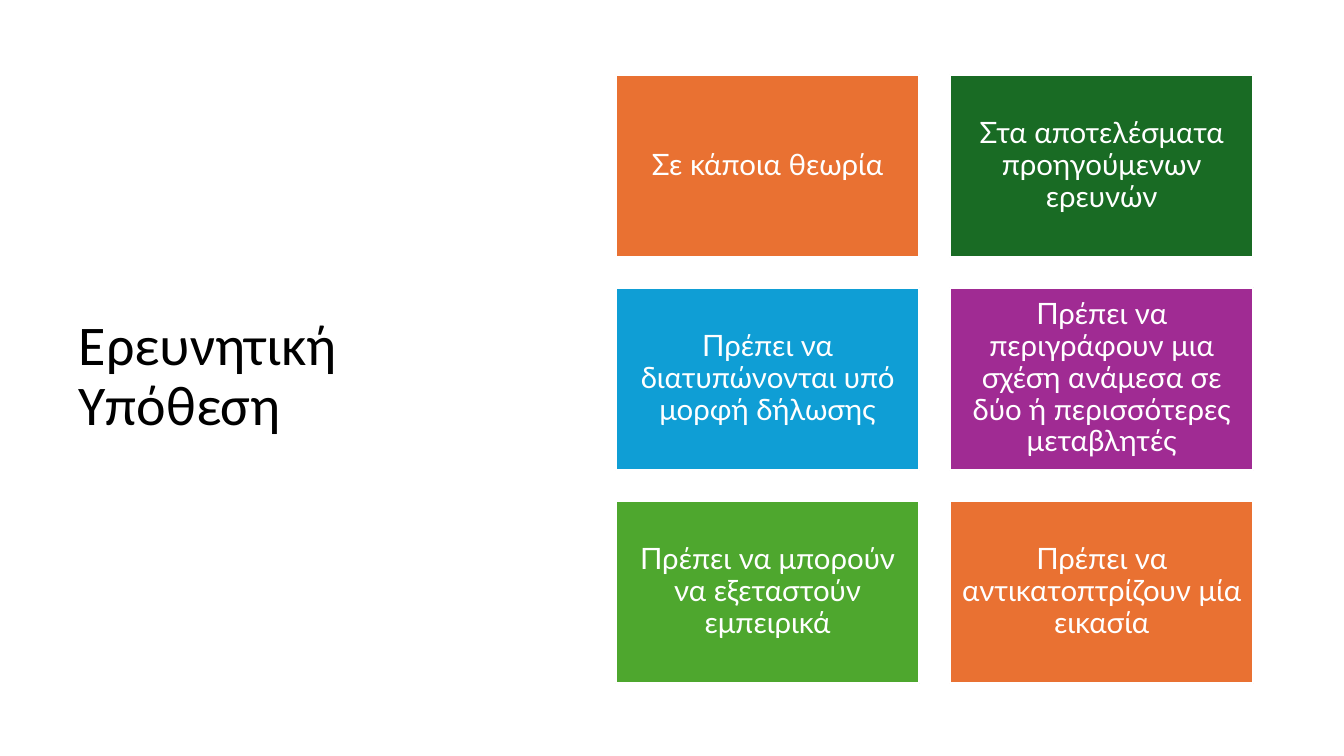
from dataclasses import dataclass

from pptx import Presentation
from pptx.dml.color import RGBColor
from pptx.enum.shapes import MSO_SHAPE
from pptx.enum.text import MSO_ANCHOR, MSO_AUTO_SIZE, PP_ALIGN
from pptx.slide import Slide
from pptx.text.text import TextFrame
from pptx.util import Cm, Pt

RECTANGLE = MSO_SHAPE.RECTANGLE
MIDDLE = MSO_ANCHOR.MIDDLE
NO_AUTOFIT = MSO_AUTO_SIZE.NONE
LEFT = PP_ALIGN.LEFT
CENTER = PP_ALIGN.CENTER

BLACK = RGBColor(0x00, 0x00, 0x00)
WHITE = RGBColor(0xFF, 0xFF, 0xFF)
ORANGE = RGBColor(0xE9, 0x71, 0x32)
DARK_GREEN = RGBColor(0x19, 0x6B, 0x24)
BLUE = RGBColor(0x0F, 0x9E, 0xD5)
PURPLE = RGBColor(0xA0, 0x2B, 0x93)
GREEN = RGBColor(0x4E, 0xA7, 0x2E)

TITLE_ONLY_LAYOUT = 5
COLUMNS = 2
GRID_LEFT, GRID_TOP = 15.52, 1.88
CARD_WIDTH, CARD_HEIGHT = 7.65, 4.6
CARD_GAP = 0.77
CARD_INSET = Cm(0.23)


@dataclass(frozen=True)
class Card:
    text: str
    color: RGBColor


@dataclass(frozen=True)
class TextStyle:
    font: str
    size: int
    color: RGBColor
    alignment: PP_ALIGN


TITLE_STYLE = TextStyle("Calibri", 40, BLACK, LEFT)
CARD_STYLE = TextStyle("Lato", 21, WHITE, CENTER)

CARDS = [
    Card("Σε κάποια θεωρία", ORANGE),
    Card("Στα αποτελέσματα προηγούμενων ερευνών", DARK_GREEN),
    Card("Πρέπει να διατυπώνονται υπό μορφή δήλωσης", BLUE),
    Card("Πρέπει να περιγράφουν μια σχέση ανάμεσα σε δύο ή περισσότερες μεταβλητές", PURPLE),
    Card("Πρέπει να μπορούν να εξεταστούν εμπειρικά", GREEN),
    Card("Πρέπει να αντικατοπτρίζουν μία εικασία", ORANGE),
]


def write_text(text_frame: TextFrame, text: str, style: TextStyle) -> None:
    text_frame.word_wrap = True
    text_frame.auto_size = NO_AUTOFIT
    text_frame.vertical_anchor = MIDDLE
    paragraph = text_frame.paragraphs[0]
    paragraph.alignment = style.alignment
    paragraph.line_spacing = 0.9
    run = paragraph.add_run()
    run.text = text
    run.font.name = style.font
    run.font.size = Pt(style.size)
    run.font.color.rgb = style.color


def add_title(slide: Slide, text: str) -> None:
    title = slide.shapes.title
    title.left, title.top = Cm(1.73), Cm(3.23)
    title.width, title.height = Cm(10), Cm(12.57)
    write_text(title.text_frame, text, TITLE_STYLE)


def add_card(slide: Slide, card: Card, row: int, column: int) -> None:
    shape = slide.shapes.add_shape(
        RECTANGLE,
        Cm(GRID_LEFT + column * (CARD_WIDTH + CARD_GAP)),
        Cm(GRID_TOP + row * (CARD_HEIGHT + CARD_GAP)),
        Cm(CARD_WIDTH),
        Cm(CARD_HEIGHT),
    )
    shape.shadow.inherit = False
    shape.fill.solid()
    shape.fill.fore_color.rgb = card.color
    shape.line.color.rgb = WHITE
    shape.line.width = Pt(1.5)
    text_frame = shape.text_frame
    text_frame.margin_left = text_frame.margin_right = CARD_INSET
    text_frame.margin_top = text_frame.margin_bottom = CARD_INSET
    write_text(text_frame, card.text, CARD_STYLE)


def main() -> None:
    presentation = Presentation()
    presentation.slide_width, presentation.slide_height = Cm(33.87), Cm(19.05)
    slide = presentation.slides.add_slide(presentation.slide_layouts[TITLE_ONLY_LAYOUT])
    add_title(slide, "Eρευνητική Yπόθεση")
    for index, card in enumerate(CARDS):
        row, column = divmod(index, COLUMNS)
        add_card(slide, card, row, column)
    presentation.save("out.pptx")


if __name__ == "__main__":
    main()
